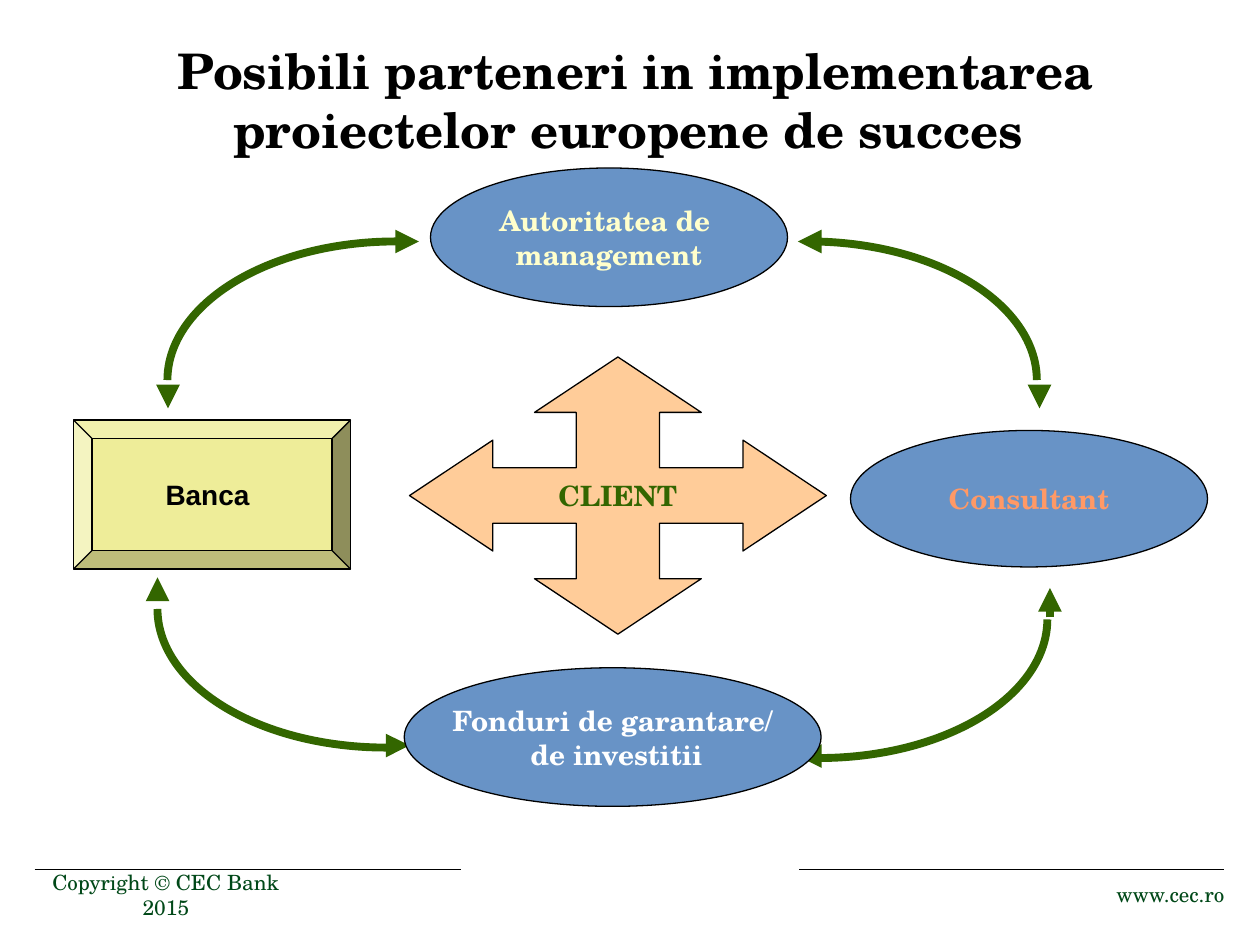
from lxml import etree
from pptx import Presentation
from pptx.dml.color import RGBColor
from pptx.enum import shapes, text
from pptx.oxml.ns import qn
from pptx.util import Inches, Pt

COLORS = {
    "black": "000000", "white": "FFFFFF", "footer": "004818",
    "green": "336600", "blue": "6893C6", "yellow": "EEED99",
    "peach": "FFCC99", "cream": "FFFFCC", "orange": "FF9966",
}
SERIF = "TeX Gyre Schola"
CENTER, LEFT, RIGHT = text.PP_ALIGN.CENTER, text.PP_ALIGN.LEFT, text.PP_ALIGN.RIGHT

deck = Presentation()
deck.slide_width, deck.slide_height = Inches(10), Inches(7.5)
slide = deck.slides.add_slide(deck.slide_layouts[6])
canvas = slide.shapes

# Square grid of 120 columns by 90 rows
CELL = deck.slide_width / 120


def grid(*cells):
    return [round(cell * CELL) for cell in cells]


def write(holder, wording, size, color, align=CENTER, font=SERIF, bold=True, wrap=True):
    frame = holder.text_frame
    frame.text = wording
    frame.word_wrap = wrap
    frame.vertical_anchor = text.MSO_ANCHOR.MIDDLE
    for line in frame.paragraphs:
        line.alignment = align
        for run in line.runs:
            run.font.name, run.font.size, run.font.bold = font, Pt(size), bold
            run.font.color.rgb = RGBColor.from_string(COLORS[color])


# Title and footer texts
for box, wording, size, color, align, bold in [
    ((1.8, 82.8, 28, 4.8), "Copyright © CEC Bank 2015", 12, "footer", CENTER, False),
    ((102.7, 82.8, 15.1, 4.8), "www.cec.ro", 12, "footer", RIGHT, False),
    ((5, 4, 111, 11), "Posibili parteneri in implementarea proiectelor europene de succes ",
     28, "black", CENTER, True),
]:
    write(canvas.add_textbox(*grid(*box)), wording, size, color, align, bold=bold)

# Client: four-way arrow, one arm turned by quarter turns on a 10 x 10 grid
arm = [(-1, -1), (-1, -3), (-2, -3), (0, -5), (2, -3), (1, -3)]
outline = []
for turn in range(4):
    outline += arm
    arm = [(-y, x) for x, y in arm]
points = [grid(58.85 + 3.97 * x, 47.2 + 2.64 * y) for x, y in outline]
pen = canvas.build_freeform(*points[0])
pen.add_line_segments(points[1:], close=True)
client = pen.convert_to_shape()

# Partners round the client
authority = canvas.add_shape(shapes.MSO_SHAPE.OVAL, *grid(41, 16, 34, 13.2))
consultant = canvas.add_shape(shapes.MSO_SHAPE.OVAL, *grid(81, 41, 34, 13))
bank = canvas.add_shape(shapes.MSO_SHAPE.BEVEL, *grid(7, 40, 26.4, 14.2))
write(authority, "Autoritatea de \nmanagement", 16, "cream", wrap=False)
write(consultant, "Consultant", 16, "orange", wrap=False)
write(bank, "Banca", 16, "black", LEFT, "Arial")
bank.text_frame.margin_left = grid(7)[0]
client_label = canvas.add_textbox(*grid(52, 45, 17, 4.4))
write(client_label, "CLIENT", 16, "green", LEFT)

# Quarter arcs: centre column, centre row, start angle
for column, row, start in [(77, 36.2, 270), (37.7, 36.2, 180), (78, 59, 0), (36.75, 58, 90)]:
    arc = canvas.add_shape(shapes.MSO_SHAPE.ARC,
                           *grid(column - 21.75, row - 13.2, 43.5, 26.4))
    arc.adjustments[0] = start * 0.6
    arc.adjustments[1] = (start + 90) % 360 * 0.6
    arc.shadow.inherit = False
    arc.fill.background()
    arc.line.color.rgb = RGBColor.from_string(COLORS["green"])
    arc.line.width = Pt(4.5)

# Footer rules, then the arrowheads that end each arc
rules = [(76.1, 82.8, 116.6, 82.8), (3.3, 82.8, 43.9, 82.8)]
tips = [
    (99, 37, 99, 38.9), (77.9, 23, 76, 23), (38, 23, 39.9, 23), (16, 37, 16, 38.9),
    (77.9, 72, 76, 72), (100, 58.8, 100, 56), (15, 56.9, 15, 55), (38, 71, 39, 71),
]
for ends in rules + tips:
    stroke = canvas.add_connector(shapes.MSO_CONNECTOR.STRAIGHT, *grid(*ends))
    is_tip = ends in tips
    stroke.line.color.rgb = RGBColor.from_string(COLORS["green" if is_tip else "black"])
    stroke.line.width = Pt(4.5 if is_tip else 0.75)
    if is_tip:
        etree.SubElement(stroke.line._get_or_add_ln(), qn("a:tailEnd"), type="triangle")
    etree.SubElement(stroke._element.spPr, qn("a:effectLst"))

# Funds lie over the lower arrowheads
funds = canvas.add_shape(shapes.MSO_SHAPE.OVAL, *grid(38.5, 63.6, 39.7, 13.2))
write(funds, "Fonduri de garantare/\n de investitii", 16, "white", wrap=False)

# Fill and outline of the filled shapes
for figure, color in [(authority, "blue"), (consultant, "blue"), (funds, "blue"),
                      (bank, "yellow"), (client, "peach")]:
    figure.shadow.inherit = False
    figure.fill.solid()
    figure.fill.fore_color.rgb = RGBColor.from_string(COLORS[color])
    figure.line.color.rgb = RGBColor.from_string(COLORS["black"])
    figure.line.width = Pt(0.75)

deck.save("out.pptx")
